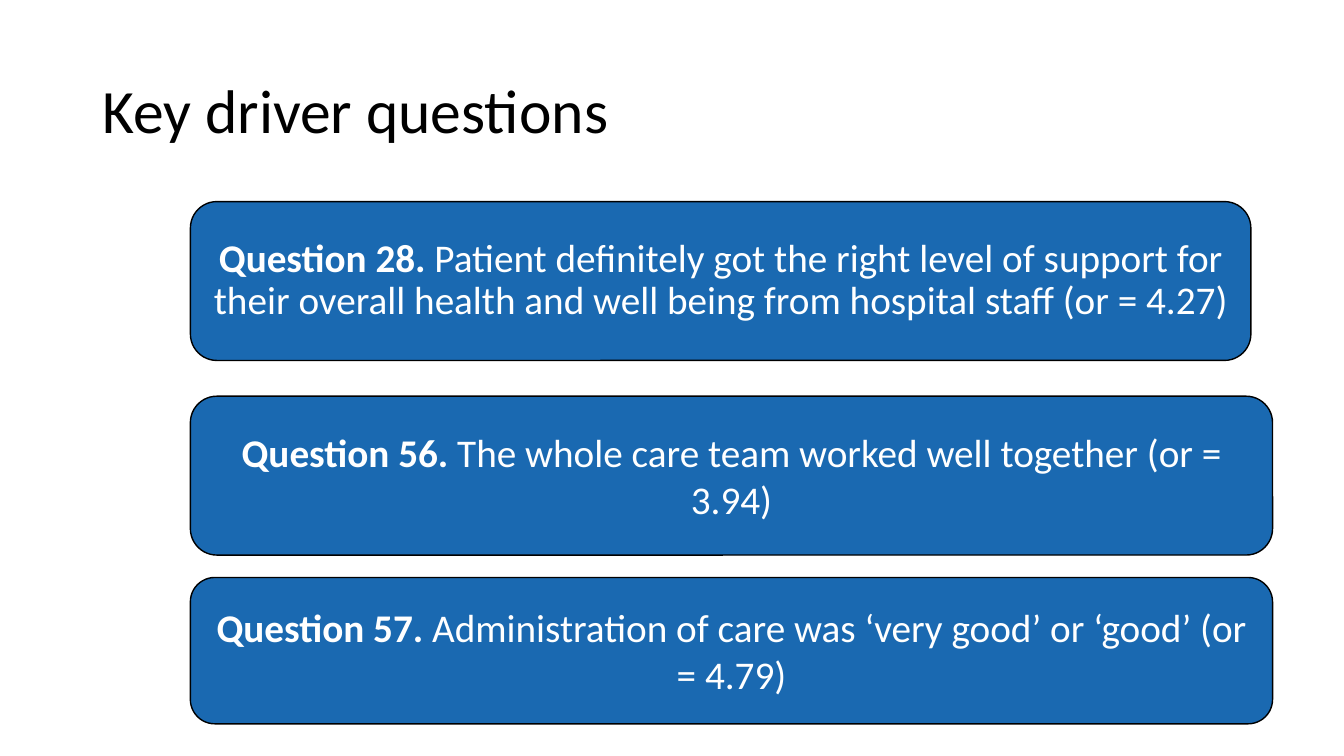
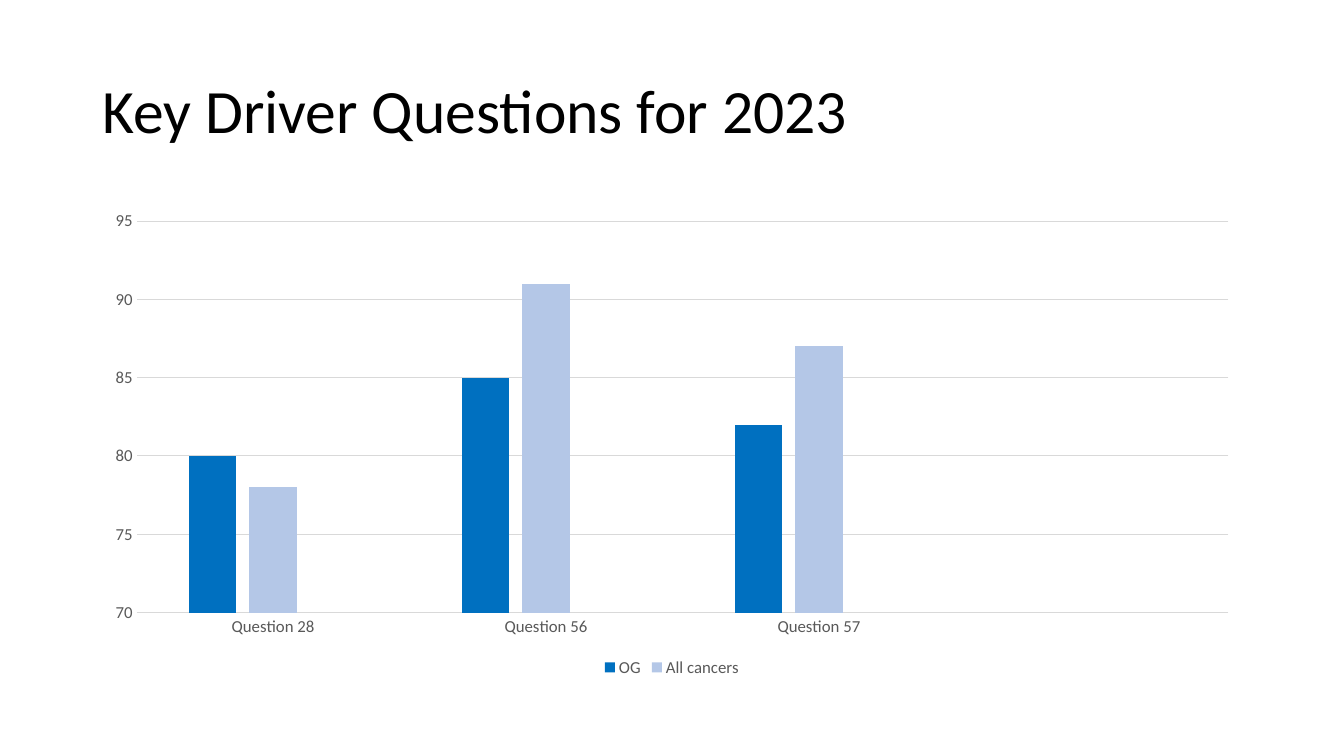
from dataclasses import dataclass

from lxml import etree
from pptx import Presentation
from pptx.chart.data import CategoryChartData
from pptx.dml.color import RGBColor
from pptx.enum.chart import XL_CHART_TYPE, XL_LEGEND_POSITION, XL_TICK_MARK
from pptx.enum.shapes import MSO_SHAPE
from pptx.enum.text import MSO_ANCHOR, PP_ALIGN
from pptx.oxml.ns import qn
from pptx.slide import Slide
from pptx.util import Pt

COLUMNS = XL_CHART_TYPE.COLUMN_CLUSTERED
LEGEND_BOTTOM = XL_LEGEND_POSITION.BOTTOM
NO_TICKS = XL_TICK_MARK.NONE
ROUNDED = MSO_SHAPE.ROUNDED_RECTANGLE
MIDDLE = MSO_ANCHOR.MIDDLE
CENTER = PP_ALIGN.CENTER


@dataclass(frozen=True)
class Theme:
    font: str = "Calibri"
    title_size: float = 44
    card_size: float = 28
    chart_size: float = 12
    text: RGBColor = RGBColor(0x00, 0x00, 0x00)
    card_fill: RGBColor = RGBColor(0x1A, 0x69, 0xB1)
    card_text: RGBColor = RGBColor(0xFF, 0xFF, 0xFF)
    chart_text: RGBColor = RGBColor(0x59, 0x59, 0x59)
    grid: RGBColor = RGBColor(0xD9, 0xD9, 0xD9)


@dataclass(frozen=True)
class QuestionCard:
    number: int
    finding: str
    top: float
    width: float
    height: float
    line_spacing: float = 1.0


@dataclass(frozen=True)
class ScoreSeries:
    name: str
    scores: tuple[int | None, ...]
    color: RGBColor


THEME = Theme()
SLIDE_WIDTH, SLIDE_HEIGHT = 960, 540
MARGIN, CONTENT_WIDTH = 66, 828
CONTENT_TOP = 144
CARD_LEFT = 136

CARDS = (
    QuestionCard(28, "Patient definitely got the right level of support for their overall "
                 "health and well being from hospital staff (or = 4.27)",
                 CONTENT_TOP, 757.5, 113.5, 0.9),
    QuestionCard(56, "The whole care team worked well together (or = 3.94)",
                 283, 773, 113.5),
    QuestionCard(57, "Administration of care was ‘very good’ or ‘good’ (or = 4.79)",
                 412.5, 773, 104.5),
)
# The fourth category and third series are empty but take up room in the plot.
CATEGORIES = tuple(f"Question {card.number}" for card in CARDS) + ("",)
SERIES = (
    ScoreSeries("OG", (80, 85, 82, None), RGBColor(0x00, 0x70, 0xC0)),
    ScoreSeries("All cancers", (78, 91, 87, None), RGBColor(0xB4, 0xC7, 0xE7)),
    ScoreSeries("Series 3", (None,) * 4, RGBColor(0xA5, 0xA5, 0xA5)),
)


def style_font(font, size: float, color: RGBColor) -> None:
    font.name = THEME.font
    font.size = Pt(size)
    font.color.rgb = color


def add_titled_slide(deck, title: str) -> Slide:
    slide = deck.slides.add_slide(deck.slide_layouts[6])
    box = slide.shapes.add_textbox(Pt(MARGIN), Pt(28.75), Pt(CONTENT_WIDTH), Pt(104.5))
    frame = box.text_frame
    frame.word_wrap = True
    frame.vertical_anchor = MIDDLE
    paragraph = frame.paragraphs[0]
    paragraph.text = title
    paragraph.line_spacing = 0.9
    style_font(paragraph.font, THEME.title_size, THEME.text)
    return slide


def add_card(slide: Slide, card: QuestionCard) -> None:
    shape = slide.shapes.add_shape(ROUNDED, Pt(CARD_LEFT), Pt(card.top),
                                   Pt(card.width), Pt(card.height))
    shape.shadow.inherit = False
    shape.fill.solid()
    shape.fill.fore_color.rgb = THEME.card_fill
    shape.line.color.rgb = THEME.text
    shape.line.width = Pt(1)
    frame = shape.text_frame
    frame.word_wrap = True
    frame.vertical_anchor = MIDDLE
    paragraph = frame.paragraphs[0]
    paragraph.alignment = CENTER
    paragraph.line_spacing = card.line_spacing
    style_font(paragraph.font, THEME.card_size, THEME.card_text)
    label = paragraph.add_run()
    label.text = f"Question {card.number}. "
    label.font.bold = True
    paragraph.add_run().text = card.finding


def hide_legend_entry(legend, index: int) -> None:
    entry = etree.Element(qn("c:legendEntry"))
    etree.SubElement(entry, qn("c:idx")).set("val", str(index))
    etree.SubElement(entry, qn("c:delete")).set("val", "1")
    legend._element.find(qn("c:legendPos")).addnext(entry)


def style_grid_line(line) -> None:
    line.color.rgb = THEME.grid
    line.width = Pt(0.75)


def add_score_chart(slide: Slide) -> None:
    data = CategoryChartData()
    data.categories = CATEGORIES
    for series in SERIES:
        data.add_series(series.name, series.scores)
    chart = slide.shapes.add_chart(COLUMNS, Pt(MARGIN), Pt(CONTENT_TOP),
                                   Pt(CONTENT_WIDTH), Pt(342.75), data).chart
    chart.has_title = False
    style_font(chart.font, THEME.chart_size, THEME.chart_text)

    plot = chart.plots[0]
    plot.gap_width = 219
    plot.overlap = -27
    plot.vary_by_categories = False
    for bars, series in zip(plot.series, SERIES):
        bars.format.fill.solid()
        bars.format.fill.fore_color.rgb = series.color

    scores, questions = chart.value_axis, chart.category_axis
    for axis in (scores, questions):
        axis.major_tick_mark = axis.minor_tick_mark = NO_TICKS
    style_grid_line(questions.format.line)
    style_grid_line(scores.major_gridlines.format.line)
    scores.format.line.fill.background()
    scores.minimum_scale, scores.maximum_scale, scores.major_unit = 70, 95, 5

    chart.has_legend = True
    chart.legend.position = LEGEND_BOTTOM
    chart.legend.include_in_layout = False
    hide_legend_entry(chart.legend, 2)


def main() -> None:
    deck = Presentation()
    deck.slide_width, deck.slide_height = Pt(SLIDE_WIDTH), Pt(SLIDE_HEIGHT)
    questions_slide = add_titled_slide(deck, "Key driver questions")
    for card in CARDS:
        add_card(questions_slide, card)
    add_score_chart(add_titled_slide(deck, "Key Driver Questions for 2023"))
    deck.save("out.pptx")


if __name__ == "__main__":
    main()
